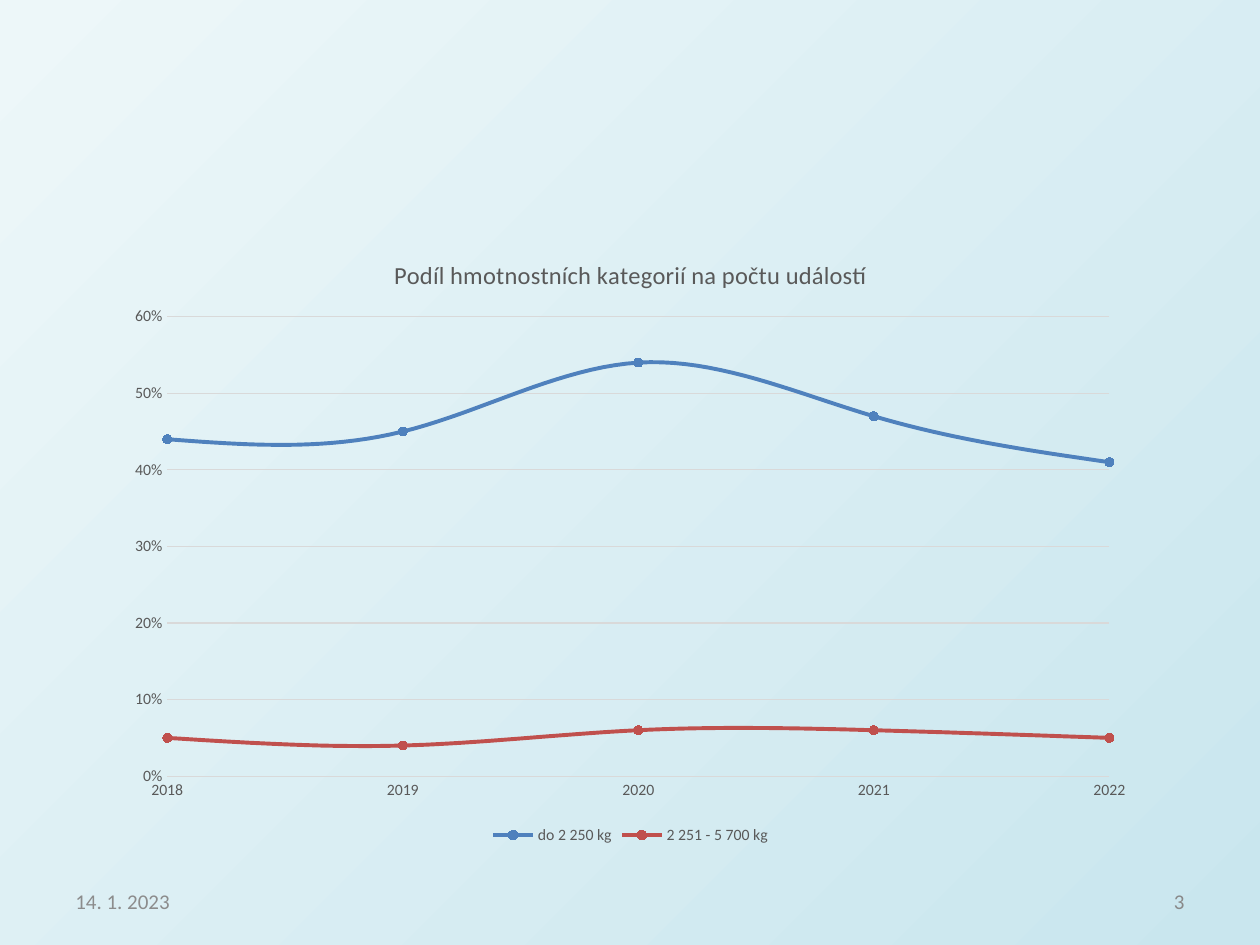
from dataclasses import dataclass
from typing import Any

from lxml.etree import SubElement
from pptx import Presentation
from pptx.chart.data import XyChartData
from pptx.dml.color import RGBColor
from pptx.enum.chart import XL_CHART_TYPE as Kind, XL_LEGEND_POSITION as Spot
from pptx.enum.chart import XL_MARKER_STYLE as Mark, XL_TICK_MARK as Tick
from pptx.enum.text import MSO_ANCHOR as Anchor, PP_ALIGN as Align
from pptx.oxml.ns import qn
from pptx.util import Inches, Pt

WIDE, HIGH = Inches(10), Inches(7.5)
FONT = "Calibri"
PALE = RGBColor(0xED, 0xF7, 0xF9)
AQUA = RGBColor(0xC9, 0xE6, 0xEE)
BLUE = RGBColor(0x4F, 0x81, 0xBD)
RED = RGBColor(0xC0, 0x50, 0x4D)
GRID = RGBColor(0xD9, 0xD9, 0xD9)
DARK = RGBColor(0x59, 0x59, 0x59)
GREY = RGBColor(0x8C, 0x8C, 0x8C)
MIST = RGBColor(0x89, 0x89, 0x89)
YEARS = range(2022, 2017, -1)


@dataclass(frozen=True)
class Box:
    """A frame in percent of its parent's width and height."""
    x: float
    y: float
    w: float
    h: float

    def emu(self) -> tuple[int, ...]:
        """Give the frame in slide units."""
        pairs = (self.x, WIDE), (self.y, HIGH), (self.w, WIDE), (self.h, HIGH)
        return tuple(int(part * full / 100) for part, full in pairs)


@dataclass(frozen=True)
class Line:
    """One weight class and its share of events by year."""
    name: str
    color: RGBColor
    vals: tuple[float, ...]


@dataclass(frozen=True)
class Foot:
    """One footer text."""
    text: str
    x: float
    align: Align
    color: RGBColor


LINES = (
    Line("do 2 250 kg", BLUE, (0.41, 0.47, 0.54, 0.45, 0.44)),
    Line("2 251 - 5 700 kg", RED, (0.05, 0.06, 0.06, 0.04, 0.05)),
)
FEET = (
    Foot("14. 1. 2023", 5, Align.LEFT, GREY),
    Foot("3", 71.7, Align.RIGHT, MIST),
)


def style(font: Any, size: float, color: RGBColor) -> None:
    """Set the face, size and colour of a font."""
    font.name, font.size, font.bold = FONT, Pt(size), False
    font.color.rgb = color


def write(frame: Any, text: str, *, size: float, color: RGBColor, align: Align) -> None:
    """Put formatted text into a text frame."""
    frame.word_wrap = True
    frame.vertical_anchor = Anchor.MIDDLE
    par = frame.paragraphs[0]
    par.alignment = align
    run = par.add_run()
    run.text = text
    style(run.font, size, color)


def stroke(line: Any, color: RGBColor, width: float) -> None:
    """Set the colour and width of a line."""
    line.color.rgb = color
    line.width = Pt(width)


def scale(axis: Any, low: float, high: float, step: float, form: str) -> None:
    """Set the range, labels and ticks of an axis."""
    axis.minimum_scale, axis.maximum_scale, axis.major_unit = low, high, step
    axis.major_tick_mark = axis.minor_tick_mark = Tick.NONE
    labels = axis.tick_labels
    labels.number_format, labels.number_format_is_linked = form, False
    style(labels.font, 9, DARK)


def smooth(row: Any) -> None:
    """Draw a series as a smooth curve."""
    node = row._element.find(qn("c:smooth"))
    if node is None:
        node = SubElement(row._element, qn("c:smooth"))
    node.set("val", "1")


def fix(chart: Any, box: Box) -> None:
    """Place the inner plot area within the chart."""
    area = chart._chartSpace.chart.plotArea
    for old in area.findall(qn("c:layout")):
        area.remove(old)
    root = SubElement(area, qn("c:layout"))
    area.insert(0, root)
    node = SubElement(root, qn("c:manualLayout"))
    parts = {"layoutTarget": "inner", "xMode": "edge", "yMode": "edge",
             "x": box.x / 100, "y": box.y / 100, "w": box.w / 100, "h": box.h / 100}
    for tag, val in parts.items():
        SubElement(node, qn(f"c:{tag}")).set("val", str(val))


def plot(slide: Any, box: Box) -> None:
    """Draw the smooth line chart of shares by year."""
    data = XyChartData()
    for line in LINES:
        row = data.add_series(line.name, number_format="0%")
        for year, val in zip(YEARS, line.vals):
            row.add_data_point(year, val)
    chart = slide.shapes.add_chart(Kind.XY_SCATTER_SMOOTH, *box.emu(), data).chart
    style(chart.font, 10, DARK)
    chart.plots[0].vary_by_categories = False

    chart.has_title = True
    write(chart.chart_title.text_frame, "Podíl hmotnostních kategorií na počtu událostí",
          size=14, color=DARK, align=Align.CENTER)
    chart.has_legend = True
    chart.legend.position = Spot.BOTTOM
    chart.legend.include_in_layout = False
    style(chart.legend.font, 9, DARK)

    base, side = chart.category_axis, chart.value_axis
    scale(base, 2018, 2022, 1, "0")
    scale(side, 0, 0.6, 0.1, "0%")
    base.has_major_gridlines = False
    stroke(base.format.line, GRID, 0.75)
    side.format.line.fill.background()
    side.has_major_gridlines = True
    stroke(side.major_gridlines.format.line, GRID, 0.75)

    for row, line in zip(chart.plots[0].series, LINES):
        smooth(row)
        stroke(row.format.line, line.color, 2.25)
        mark = row.marker
        mark.style, mark.size = Mark.CIRCLE, 5
        mark.format.fill.solid()
        mark.format.fill.fore_color.rgb = line.color
        stroke(mark.format.line, line.color, 0.75)
    fix(chart, Box(5.1, 13.4, 91.3, 74.7))


def paint(slide: Any) -> None:
    """Fill the background with a diagonal gradient."""
    fill = slide.background.fill
    fill.gradient()
    fill.gradient_angle = 315
    for stop, color, spot in zip(fill.gradient_stops, (PALE, AQUA), (0, 1)):
        stop.color.rgb = color
        stop.position = spot


def main() -> None:
    """Build and save the slide."""
    deck = Presentation()
    deck.slide_width, deck.slide_height = WIDE, HIGH
    slide = deck.slides.add_slide(deck.slide_layouts[6])
    paint(slide)
    for foot in FEET:
        box = slide.shapes.add_textbox(*Box(foot.x, 92.7, 23.3, 5.3).emu())
        write(box.text_frame, foot.text, size=12, color=foot.color, align=foot.align)
    plot(slide, Box(9.1, 24.8, 81.9, 65.1))
    deck.save("out.pptx")


if __name__ == "__main__":
    main()
